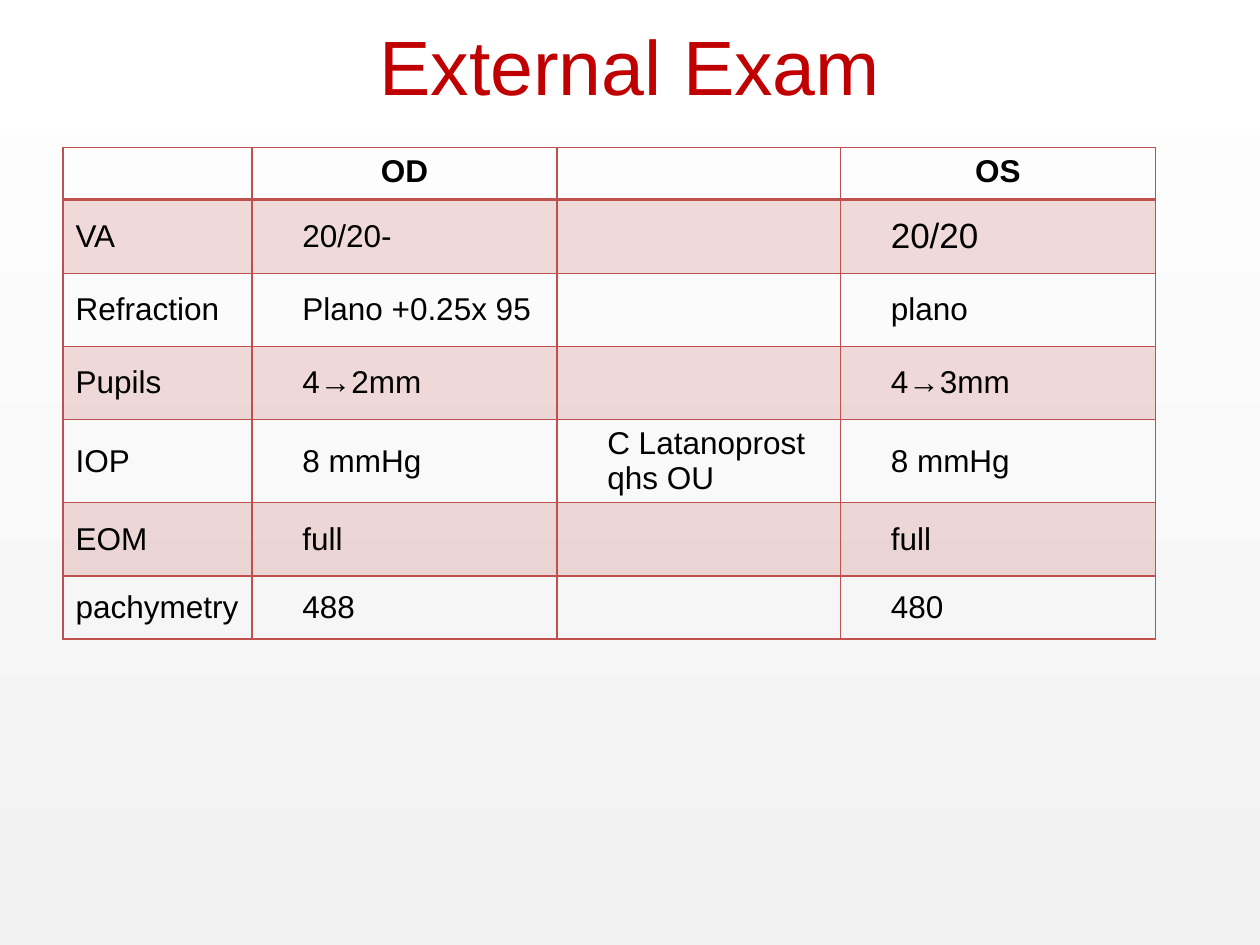
from lxml.etree import SubElement
from pptx import Presentation
from pptx.dml.color import RGBColor
from pptx.enum.shapes import MSO_SHAPE as Shape
from pptx.enum.text import MSO_ANCHOR as Anchor, PP_ALIGN as Align
from pptx.oxml.ns import qn
from pptx.util import Inches, Pt

TITLE = "External Exam"
EXAM = [
    ("", "OD", "", "OS"),
    ("VA", "20/20-", "", "20/20"),
    ("Refraction", "Plano +0.25x 95", "", "plano"),
    ("Pupils", "4→2mm", "", "4→3mm"),
    ("IOP", "8 mmHg", "C Latanoprost qhs OU", "8 mmHg"),
    ("EOM", "full", "", "full"),
    ("pachymetry", "488", "", "480"),
]
COLUMNS = [1.5, 2.42, 2.25, 2.5]
ROWS = [0.41, 0.59] + [0.58] * 4 + [0.5]
LARGER = {(1, 3): 20}
ACCENT, BLACK, RED = "C0504D", "000000", "C00000"
BACKDROP = ["F2F2F2", "FFFFFF"]


def rgb(value):
    return RGBColor.from_string(value)


def apply(target, **values):
    for key, value in values.items():
        setattr(target, key, value)


def style_font(font, size, color, bold=False):
    apply(font, name="Arial", size=Pt(size), bold=bold)
    font.color.rgb = rgb(color)


def add_backdrop(slide, width, height):
    backdrop = slide.shapes.add_shape(Shape.RECTANGLE, 0, 0, width, height)
    backdrop.shadow.inherit = False
    backdrop.line.fill.background()
    backdrop.fill.gradient()
    backdrop.fill.gradient_angle = 90
    for stop, color, position in zip(backdrop.fill.gradient_stops, BACKDROP, (0, 1)):
        stop.color.rgb = rgb(color)
        stop.position = position
    slide.shapes._spTree.insert(2, backdrop._element)


def add_borders(cell, row):
    properties = cell._tc.get_or_add_tcPr()
    heavy = {(0, "B"), (1, "T")}
    for side in "LRTB":
        points = 2 if (row, side) in heavy else 1
        line = SubElement(properties, qn(f"a:ln{side}"), w=str(Pt(points)))
        SubElement(SubElement(line, qn("a:solidFill")), qn("a:srgbClr"), val=ACCENT)


def fill_cell(cell, row):
    if row % 2 == 0:
        cell.fill.background()
        return
    cell.fill.solid()
    cell.fill.fore_color.rgb = rgb(ACCENT)
    tint = cell._tc.tcPr.find(f"{qn('a:solidFill')}/{qn('a:srgbClr')}")
    SubElement(tint, qn("a:alpha"), val="20000")


def write_cell(cell, row, column, text):
    header = row == 0
    indented = column > 0 and not header
    apply(cell, margin_left=Inches(0.4 if indented else 0.1), margin_right=Inches(0.1),
          margin_top=Inches(0.05), margin_bottom=Inches(0.05),
          vertical_anchor=Anchor.TOP if header else Anchor.MIDDLE)
    cell.text = text
    entry = cell.text_frame.paragraphs[0]
    entry.alignment = Align.CENTER if header else Align.LEFT
    fonts = [run.font for run in entry.runs] or [entry.font]
    for font in fonts:
        style_font(font, LARGER.get((row, column), 18), BLACK, header)


def add_exam(slide):
    exam = slide.shapes.add_table(len(ROWS), len(COLUMNS), Inches(0.5), Inches(1.17),
                                  Inches(sum(COLUMNS)), Inches(sum(ROWS))).table
    apply(exam, first_row=False, horz_banding=False)
    for column, width in zip(exam.columns, COLUMNS):
        column.width = Inches(width)
    for row, (height, entries) in enumerate(zip(ROWS, EXAM)):
        exam.rows[row].height = Inches(height)
        for column, text in enumerate(entries):
            cell = exam.cell(row, column)
            add_borders(cell, row)
            fill_cell(cell, row)
            write_cell(cell, row, column, text)


def add_title(slide):
    title = slide.shapes.title
    apply(title, left=Inches(0.5), top=Inches(-0.11), width=Inches(9), height=Inches(1.25))
    title.text_frame.text = TITLE
    title.text_frame.vertical_anchor = Anchor.MIDDLE
    heading = title.text_frame.paragraphs[0]
    heading.alignment = Align.CENTER
    style_font(heading.runs[0].font, 44, RED)


def main():
    deck = Presentation()
    apply(deck, slide_width=Inches(10), slide_height=Inches(7.5))
    slide = deck.slides.add_slide(deck.slide_layouts[5])
    add_backdrop(slide, deck.slide_width, deck.slide_height)
    add_exam(slide)
    add_title(slide)
    deck.save("out.pptx")


if __name__ == "__main__":
    main()
